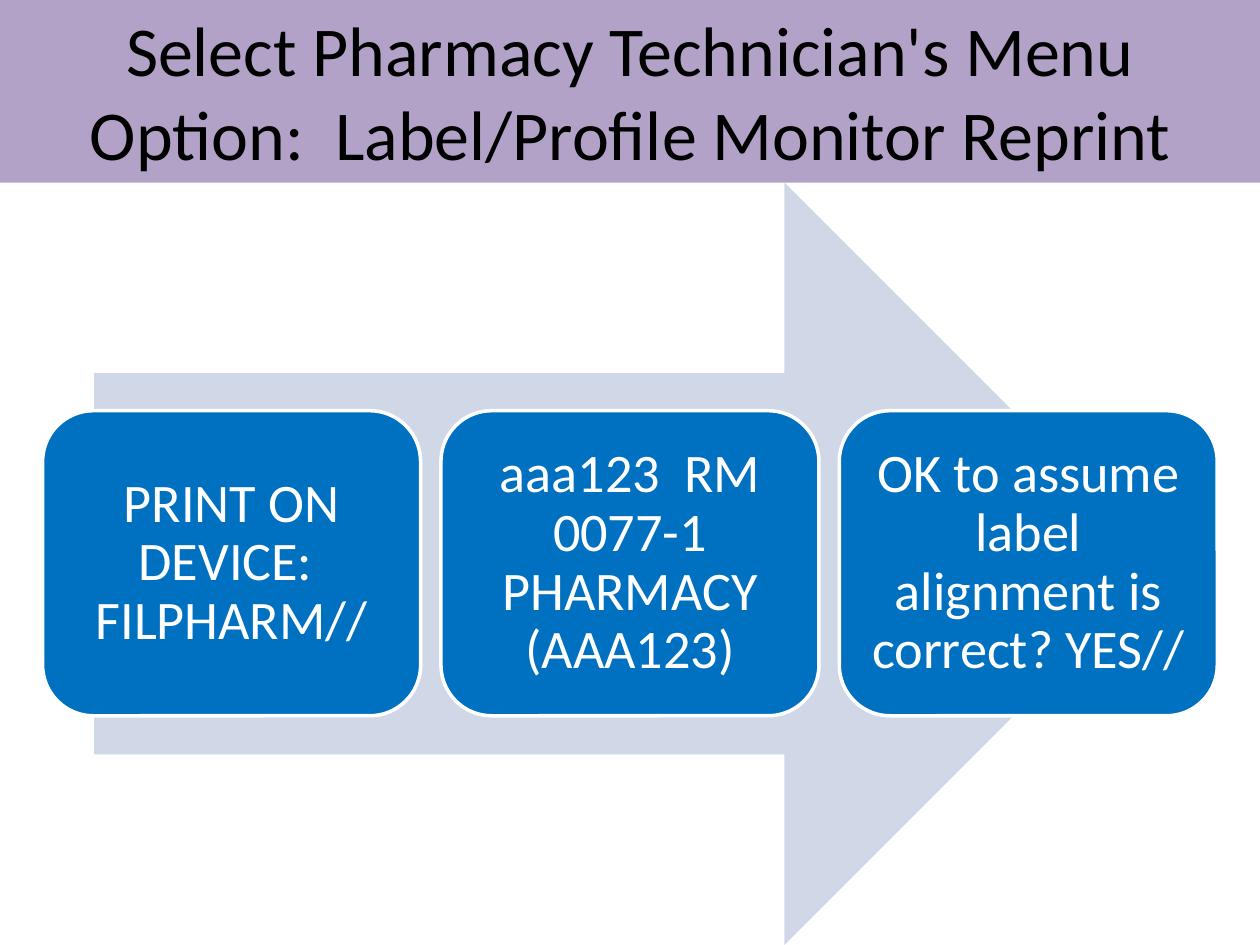
from dataclasses import dataclass

from pptx import Presentation
from pptx.dml.color import RGBColor
from pptx.enum.shapes import MSO_SHAPE
from pptx.enum.text import MSO_ANCHOR, MSO_AUTO_SIZE, PP_ALIGN
from pptx.util import Cm, Pt

FONT = "Calibri"
WIDTH, HEIGHT = 25.4, 19.05
TITLE_HEIGHT = 3.68
STEP_WIDTH, STEP_HEIGHT, STEP_PITCH = 7.62, 6.15, 8.03
STEP_LEFT, STEP_TOP = 0.86, 8.28


@dataclass
class Box:
    left: float
    top: float
    width: float
    height: float

    def lengths(self) -> tuple:
        return Cm(self.left), Cm(self.top), Cm(self.width), Cm(self.height)


def rgb(value: str) -> RGBColor:
    return RGBColor.from_string(value)


def set_fill(shape, color: str) -> None:
    shape.fill.solid()
    shape.fill.fore_color.rgb = rgb(color)


def set_text(shape, text: str, *, size: float, color: str, anchor: MSO_ANCHOR,
             spacing: float = 1.0, inset: tuple = (0.25, 0.13)) -> None:
    tf = shape.text_frame
    tf.word_wrap = True
    tf.auto_size = MSO_AUTO_SIZE.NONE
    tf.vertical_anchor = anchor
    tf.margin_left = tf.margin_right = Cm(inset[0])
    tf.margin_top = tf.margin_bottom = Cm(inset[1])
    p = tf.paragraphs[0]
    p.alignment = PP_ALIGN.CENTER
    p.line_spacing = spacing
    r = p.add_run()
    r.text = text
    r.font.name = FONT
    r.font.size = Pt(size)
    r.font.color.rgb = rgb(color)


def add_shape(s, kind: MSO_SHAPE, box: Box, color: str, line: str | None = None):
    sp = s.shapes.add_shape(kind, *box.lengths())
    sp.shadow.inherit = False
    set_fill(sp, color)
    if line:
        sp.line.color.rgb = rgb(line)
        sp.line.width = Pt(2)
    else:
        sp.line.fill.background()
    return sp


def main() -> None:
    prs = Presentation()
    prs.slide_width, prs.slide_height = Cm(WIDTH), Cm(HEIGHT)
    s = prs.slides.add_slide(prs.slide_layouts[5])

    # Title band
    title = s.shapes.title
    title.left, title.top, title.width, title.height = Box(0, 0, WIDTH, TITLE_HEIGHT).lengths()
    set_fill(title, "B3A2C7")
    set_text(title, "Select Pharmacy Technician's Menu Option:  Label/Profile Monitor Reprint",
             size=40, color="000000", anchor=MSO_ANCHOR.TOP)

    # Process arrow behind the steps
    arrow = Box(1.9, TITLE_HEIGHT, 21.6, HEIGHT - TITLE_HEIGHT)
    add_shape(s, MSO_SHAPE.RIGHT_ARROW, arrow, "D0D8E8")

    # Steps from left to right
    steps = ["PRINT ON DEVICE:  FILPHARM//",
             "aaa123  RM 0077-1 PHARMACY (AAA123)",
             "OK to assume label alignment is correct? YES//"]
    for i, text in enumerate(steps):
        box = Box(STEP_LEFT + i * STEP_PITCH, STEP_TOP, STEP_WIDTH, STEP_HEIGHT)
        sp = add_shape(s, MSO_SHAPE.ROUNDED_RECTANGLE, box, "0070C0", line="FFFFFF")
        set_text(sp, text, size=31, color="FFFFFF", anchor=MSO_ANCHOR.MIDDLE,
                 spacing=0.9, inset=(0.33, 0.33))

    prs.save("out.pptx")


if __name__ == "__main__":
    main()
